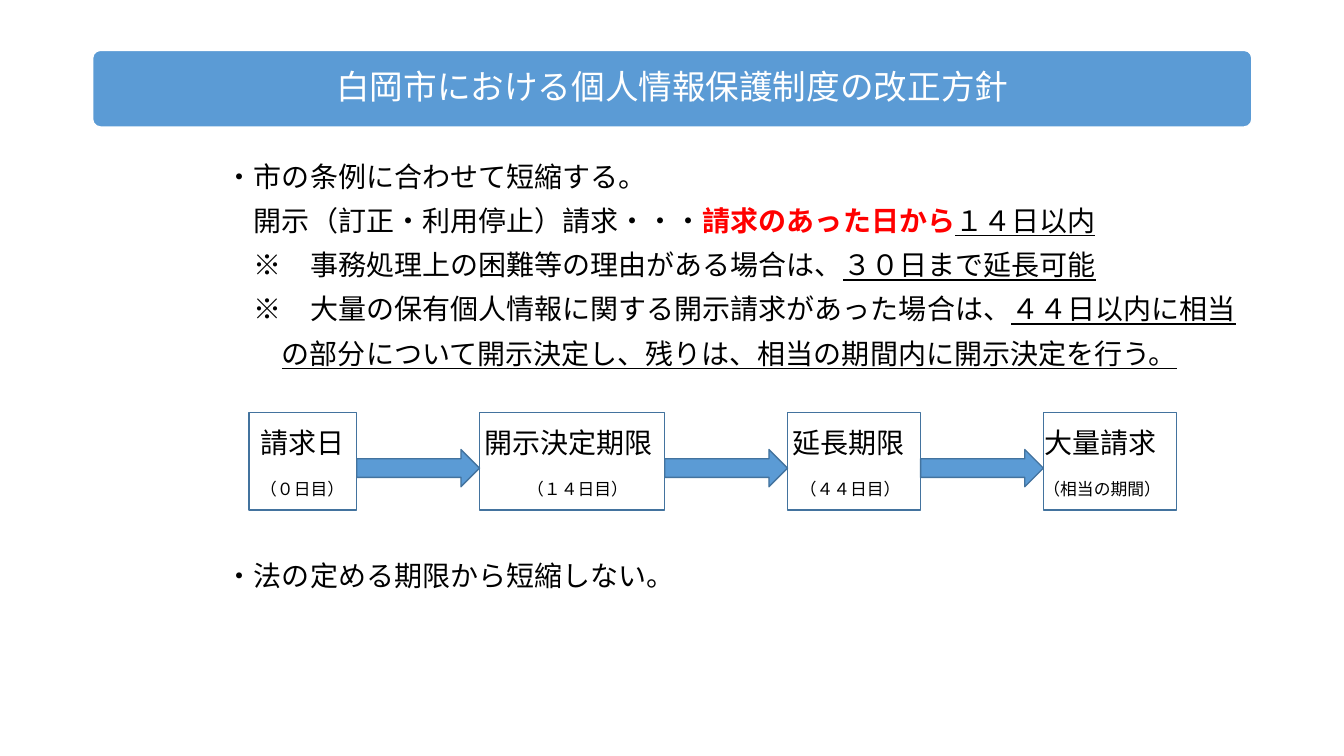
from lxml.etree import SubElement
from pptx import Presentation
from pptx.dml.color import RGBColor
from pptx.enum.shapes import MSO_SHAPE as Shape
from pptx.enum.text import MSO_ANCHOR as Anchor, PP_ALIGN as Align
from pptx.oxml.ns import qn
from pptx.util import Pt

FONT = "Noto Sans CJK JP"
COLORS = {"blue": "5B9BD5", "edge": "43739E", "white": "FFFFFF",
          "black": "000000", "red": "FF0000"}

TITLE = "白岡市における個人情報保護制度の改正方針"
RED = {"color": "red", "bold": True}
UNDERLINED = {"underline": True}
SHORTEN = [
    (0, [("・市の条例に合わせて短縮する。", {})]),
    (20, [("開示（訂正・利用停止）請求・・・", {}),
          ("請求のあった日から", RED), ("１４日以内", UNDERLINED)]),
    (20, [("※　事務処理上の困難等の理由がある場合は、", {}),
          ("３０日まで延長可能", UNDERLINED)]),
    (20, [("※　大量の保有個人情報に関する開示請求があった場合は、", {}),
          ("４４日以内に相当", UNDERLINED)]),
    (40, [("の部分について開示決定し、残りは、相当の期間内に開示決定を行う。",
           UNDERLINED)]),
]
KEEP = [(0, [("・法の定める期限から短縮しない。", {})])]
STEPS = [
    ("請求日", "（０日目）", 77, 8, 8),
    ("開示決定期限", "（１４日目）", 132.3, 3.3, 34),
    ("延長期限", "（４４日目）", 95, 3.3, 8.7),
    ("大量請求", "（相当の期間）", 95, 0.6, 0),
]

LINE_HEIGHT = 31.6
NOTE_HEIGHT = 28.5
STEP_LEFT, STEP_TOP, STEP_HEIGHT, STEP_GAP = 177.9, 294.5, 69.8, 87.7
ARROW_TOP, ARROW_HEIGHT = 321.1, 26.6

presentation = Presentation()
presentation.slide_width, presentation.slide_height = Pt(960), Pt(540)
slide = presentation.slides.add_slide(presentation.slide_layouts[6])


def add_text(paragraph, text, size=20, color="black", bold=False, underline=False):
    run = paragraph.add_run()
    run.text = text
    font = run.font
    font.name, font.size = FONT, Pt(size)
    font.bold, font.underline = bold, underline
    font.color.rgb = RGBColor.from_string(COLORS[color])
    SubElement(font._element, qn("a:ea"), typeface=FONT)


def add_box(kind, left, top, width, height, fill=None, line="edge"):
    shape = slide.shapes.add_shape(kind, Pt(left), Pt(top), Pt(width), Pt(height))
    shape.shadow.inherit = False
    if fill:
        shape.fill.solid()
        shape.fill.fore_color.rgb = RGBColor.from_string(COLORS[fill])
    else:
        shape.fill.background()
    shape.line.color.rgb = RGBColor.from_string(COLORS[line])
    shape.line.width = Pt(1)
    return shape


def prepare_frame(shape, top_inset=0):
    frame = shape.text_frame
    frame.word_wrap = True
    frame.vertical_anchor = Anchor.TOP
    frame.margin_left = frame.margin_right = frame.margin_bottom = 0
    frame.margin_top = Pt(top_inset)
    return frame


def add_lines(frame, lines):
    for index, (indent, runs, height) in enumerate(lines):
        paragraph = frame.add_paragraph() if index else frame.paragraphs[0]
        paragraph.alignment = Align.LEFT
        paragraph.line_spacing = Pt(height)
        properties = paragraph._p.get_or_add_pPr()
        properties.set("marL", str(int(Pt(indent))))
        properties.set("indent", "0")
        for text, style in runs:
            add_text(paragraph, text, **style)


banner = add_box(Shape.ROUNDED_RECTANGLE, 66.2, 36, 828, 54.7, "blue", "white")
banner.adjustments[0] = 0.1
banner.text_frame.vertical_anchor = Anchor.MIDDLE
heading = banner.text_frame.paragraphs[0]
heading.alignment = Align.CENTER
heading.line_spacing = 0.9
add_text(heading, TITLE, size=24, color="white")

for top, lines in ((106.1, SHORTEN), (391.1, KEEP)):
    body = slide.shapes.add_textbox(Pt(161.4), Pt(top), Pt(740),
                                    Pt(LINE_HEIGHT * len(lines)))
    add_lines(prepare_frame(body),
              [(indent, runs, LINE_HEIGHT) for indent, runs in lines])

left = STEP_LEFT
for index, (label, note, width, label_indent, note_indent) in enumerate(STEPS):
    if index:
        add_box(Shape.RIGHT_ARROW, left - STEP_GAP, ARROW_TOP, STEP_GAP,
                ARROW_HEIGHT, "blue")
    step = add_box(Shape.RECTANGLE, left, STEP_TOP, width, STEP_HEIGHT)
    add_lines(prepare_frame(step, 1.6), [
        (label_indent, [(label, {})], LINE_HEIGHT),
        (note_indent, [(note, {"size": 12})], NOTE_HEIGHT),
    ])
    left += width + STEP_GAP

presentation.save("out.pptx")
